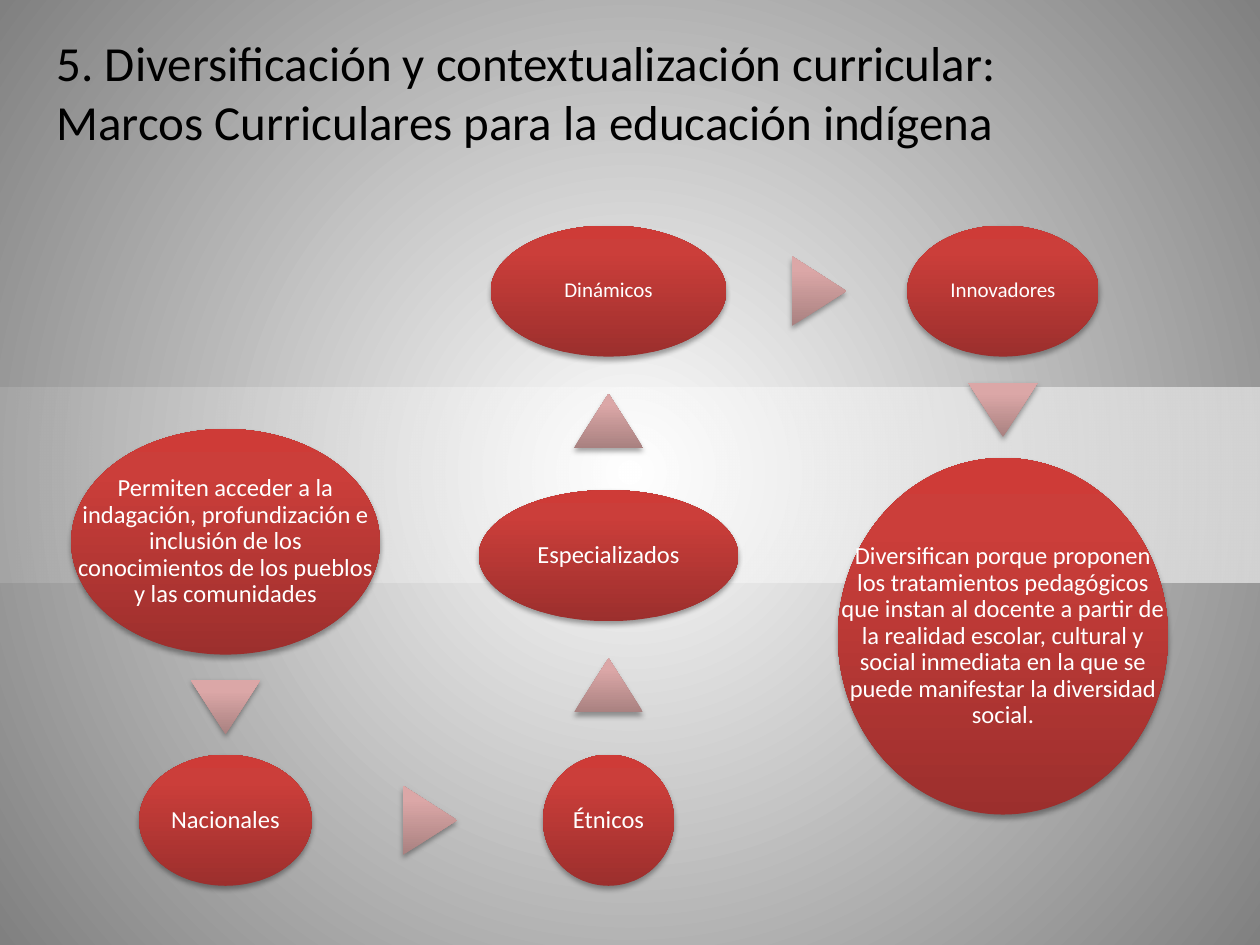
from lxml import etree
from pptx import Presentation
from pptx import util as u
from pptx.dml.color import RGBColor
from pptx.enum import shapes, text
from pptx.oxml.ns import qn

TITLE = [
    "5. Diversificación y contextualización curricular:",
    "Marcos Curriculares para la educación indígena",
]
COLS = (1.79, 4.83, 7.96)
ROWS = (2.31, 4.41, 6.51)
NODES = [
    ("Permiten acceder a la indagación, profundización e inclusión de los "
     "conocimientos de los pueblos y las comunidades",
     COLS[0], 4.3, 2.45, 1.79, "body"),
    ("Nacionales", COLS[0], ROWS[2], 1.37, 1.04, "body"),
    ("Étnicos", COLS[1], ROWS[2], 1.04, 1.04, "body"),
    ("Especializados", COLS[1], ROWS[1], 2.06, 1.04, "body"),
    ("Dinámicos", COLS[1], ROWS[0], 1.87, 1.04, "small"),
    ("Innovadores", COLS[2], ROWS[0], 1.52, 1.04, "small"),
    ("Diversifican porque proponen los tratamientos pedagógicos que instan al "
     "docente a partir de la realidad escolar, cultural y social inmediata en "
     "la que se puede manifestar la diversidad social.",
     COLS[2], 5.05, 2.62, 2.83, "body"),
]
THEME = {
    "font": "Calibri",
    "size": {"title": 28, "body": 14, "small": 12},
    "ink": "000000",
    "light": "FFFFFF",
    "back": [(0, "FFFFFF", 100), (100, "808080", 100)],
    "band": [(0, "FFFFFF", 12), (100, "FFFFFF", 57)],
    "node": [(0, "9C2F2D", 100), (80, "CB3E3A", 100), (100, "CE3B37", 100)],
    "arrow": [(0, "A98180", 100), (80, "DBA7A7", 100), (100, "DDA7A6", 100)],
}
TIP = (0.55, 0.43)
NUDGE = 0.02


def add(top, tag, **attrs):
    return etree.SubElement(top, qn(tag), {k: str(v) for k, v in attrs.items()})


def color(top, code, alpha):
    add(add(top, "a:srgbClr", val=code), "a:alpha", val=alpha * 1000)


def blend(top, stops, angle=None):
    grad = add(top, "a:gradFill", rotWithShape=0)
    group = add(grad, "a:gsLst")
    for pos, code, alpha in stops:
        color(add(group, "a:gs", pos=pos * 1000), code, alpha)
    if angle is None:
        way = add(grad, "a:path", path="circle")
        add(way, "a:fillToRect", l=50000, t=50000, r=50000, b=50000)
    else:
        add(grad, "a:lin", ang=angle * 60000, scaled=0)


def place(x, y, w, h):
    return [u.Inches(v) for v in (x - w / 2, y - h / 2, w, h)]


def draw(home, kind, box, stops, angle=270, turn=0, shade=True):
    shape = home.add_shape(kind, *box)
    shape.rotation = turn
    props = shape.fill._xPr
    blend(props, stops, angle)
    shape.line.fill.background()
    shape.shadow.inherit = False
    if shade:
        glow = add(props.find(qn("a:effectLst")), "a:outerShdw", blurRad=u.Pt(3.1),
                   dist=u.Pt(1.8), dir=5400000, rotWithShape=0)
        color(glow, "000000", 35)


def write(frame, lines, size, tint, form, para):
    for name, value in form.items():
        setattr(frame, name, value)
    frame.text = "\n".join(lines)
    for item in frame.paragraphs:
        for name, value in para.items():
            setattr(item, name, value)
        for run in item.runs:
            run.font.name = THEME["font"]
            run.font.size = u.Pt(THEME["size"][size])
            run.font.color.rgb = RGBColor.from_string(THEME[tint])


def link(home, start, end):
    _, x1, y1, w1, h1, _ = start
    _, x2, y2, w2, h2, _ = end
    if x1 == x2:
        way = 1 if y2 > y1 else -1
        y = (y1 + way * h1 / 2 + y2 - way * h2 / 2) / 2 + way * NUDGE
        x, turn = x1, 180 if way > 0 else 0
    else:
        x = (x1 + w1 / 2 + x2 - w2 / 2) / 2 + NUDGE
        y, turn = y1, 90
    draw(home, shapes.MSO_SHAPE.ISOSCELES_TRIANGLE, place(x, y, *TIP),
         THEME["arrow"], turn=turn)


def main():
    deck = Presentation()
    deck.slide_width, deck.slide_height = u.Inches(10), u.Inches(7.5)
    slide = deck.slides.add_slide(deck.slide_layouts[5])

    back = etree.Element(qn("p:bg"))
    props = add(back, "p:bgPr")
    blend(props, THEME["back"])
    add(props, "a:effectLst")
    slide.element.cSld.insert(0, back)

    draw(slide.shapes, shapes.MSO_SHAPE.RECTANGLE, place(5, 3.85, 10, 1.54),
         THEME["band"], angle=0, shade=False)

    title = slide.shapes.title
    spots = {"left": 0.35, "top": 0.21, "width": 9.37, "height": 1.04}
    for name, value in spots.items():
        setattr(title, name, u.Inches(value))
    write(title.text_frame, TITLE, "title", "ink",
          {"word_wrap": True, "vertical_anchor": text.MSO_ANCHOR.TOP,
           "auto_size": text.MSO_AUTO_SIZE.NONE},
          {"alignment": text.PP_ALIGN.LEFT, "space_before": u.Pt(0)})

    sides = ("left", "top", "right", "bottom")
    form = {f"margin_{side}": u.Inches(0.02) for side in sides}
    form |= {"word_wrap": True, "vertical_anchor": text.MSO_ANCHOR.MIDDLE}
    para = {"alignment": text.PP_ALIGN.CENTER, "line_spacing": 0.9}
    flow = slide.shapes.add_group_shape().shapes
    for i, node in enumerate(NODES):
        words, x, y, w, h, size = node
        box = place(x, y, w, h)
        draw(flow, shapes.MSO_SHAPE.OVAL, box, THEME["node"])
        label = flow.add_textbox(*box)
        write(label.text_frame, [words], size, "light", form, para)
        if i + 1 < len(NODES):
            link(flow, node, NODES[i + 1])

    deck.save("out.pptx")


if __name__ == "__main__":
    main()
